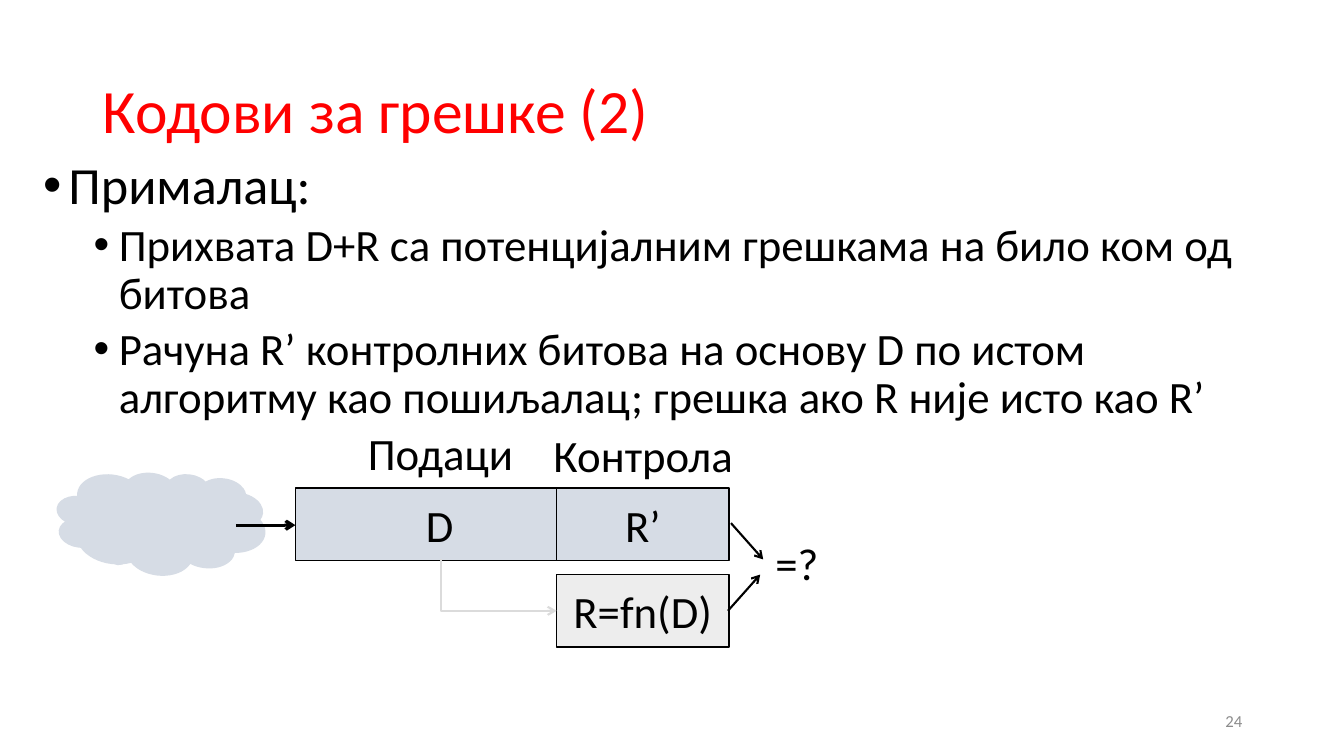
from dataclasses import dataclass
from typing import Optional

from lxml import etree
from pptx import Presentation
from pptx.dml.color import RGBColor
from pptx.enum.shapes import MSO_CONNECTOR, MSO_SHAPE
from pptx.enum.text import MSO_ANCHOR, PP_ALIGN
from pptx.oxml.ns import qn
from pptx.util import Pt

PX = 9144  # 100 px to the inch
FONT = "Calibri"
BLACK = RGBColor(0x00, 0x00, 0x00)
WHITE = RGBColor(0xFF, 0xFF, 0xFF)
RED = RGBColor(0xFF, 0x00, 0x00)
GREY = RGBColor(0x8C, 0x8C, 0x8C)
BLUE = RGBColor(0xD6, 0xDC, 0xE5)
PALE = RGBColor(0xED, 0xED, 0xED)
SILVER = RGBColor(0xDB, 0xDB, 0xDB)
LEFT, CENTER, RIGHT = PP_ALIGN.LEFT, PP_ALIGN.CENTER, PP_ALIGN.RIGHT
TOP, MIDDLE = MSO_ANCHOR.TOP, MSO_ANCHOR.MIDDLE
RECT, CLOUD = MSO_SHAPE.RECTANGLE, MSO_SHAPE.CLOUD_CALLOUT
LINE, ELBOW = MSO_CONNECTOR.STRAIGHT, MSO_CONNECTOR.ELBOW


@dataclass
class Label:
    text: str
    box: tuple[int, int, int, int]
    size: float = 32
    color: RGBColor = BLACK
    align: PP_ALIGN = CENTER
    anchor: MSO_ANCHOR = TOP
    space: float = 1.0
    wrap: bool = True


@dataclass
class Block:
    text: str
    box: tuple[int, int, int, int]
    fill: RGBColor
    line: Optional[RGBColor] = BLACK


@dataclass
class Arrow:
    start: tuple[int, int]
    end: tuple[int, int]
    width: float = 1.5
    color: RGBColor = BLACK


@dataclass
class Bullet:
    text: str
    level: int
    size: float
    left: int
    before: int


LABELS = [
    Label("24", (942, 695, 300, 40), 12, GREY, RIGHT, MIDDLE),
    Label("Кодови за грешке (2)", (92, 40, 1150, 145), 44, RED, LEFT, MIDDLE, 0.9),
    Label("Подаци", (354, 428, 166, 53), space=0.8, wrap=False),
    Label("Контрола", (538, 430, 200, 53), space=0.8, wrap=False),
]
BULLETS = [
    Bullet("Прималац:", 0, 37.3, 25, 10),
    Bullet("Прихвата D+R са потенцијалним грешкама на било ком од битова",
           1, 32, 75, 5),
    Bullet("Рачуна R’ контролних битова на основу D по истом алгоритму "
           "као пошиљалац; грешка ако R није исто као R’", 1, 32, 75, 5),
]
BLOCKS = [
    Block("D", (293, 484, 286, 72), BLUE),
    Block("R’", (552, 484, 171, 72), BLUE),
    Block("R=fn(D)", (552, 570, 171, 72), PALE),
]
RESULT = Block("=?", (769, 531, 53, 54), WHITE, None)
ARROWS = [
    Arrow((234, 521), (293, 521), 2.25),
    Arrow((722, 606), (754, 570)),
    Arrow((725, 519), (757, 555)),
]
# Corner arrow, given before its quarter turn
BEND = Arrow((520, 523), (469, 638), 1.5, SILVER)


def scale(lengths: tuple[int, ...]) -> list[int]:
    return [n * PX for n in lengths]


def style(para, size: float, color: RGBColor) -> None:
    para.font.name = FONT
    para.font.size = Pt(size)
    para.font.color.rgb = color


def add_label(slide, item: Label) -> None:
    frame = slide.shapes.add_textbox(*scale(item.box)).text_frame
    frame.word_wrap = item.wrap
    frame.vertical_anchor = item.anchor
    para = frame.paragraphs[0]
    para.text = item.text
    para.alignment = item.align
    para.line_spacing = item.space
    style(para, item.size, item.color)


def add_list(slide, items: list[Bullet]) -> None:
    frame = slide.shapes.add_textbox(*scale((33, 153, 1208, 522))).text_frame
    frame.word_wrap = True
    for i, item in enumerate(items):
        para = frame.add_paragraph() if i else frame.paragraphs[0]
        para.text = item.text
        para.level = item.level
        para.line_spacing = 0.9
        para.space_before = Pt(item.before)
        style(para, item.size, BLACK)
        props = para._p.get_or_add_pPr()
        props.set("marL", str(item.left * PX))
        props.set("indent", str(-25 * PX))
        font = etree.Element(qn("a:buFont"), typeface="Arial")
        mark = etree.Element(qn("a:buChar"), char="•")
        rest = props.find(qn("a:defRPr"))
        rest.addprevious(font)
        rest.addprevious(mark)


def add_block(slide, item: Block, kind: MSO_SHAPE = RECT):
    shape = slide.shapes.add_shape(kind, *scale(item.box))
    shape.shadow.inherit = False
    shape.fill.solid()
    shape.fill.fore_color.rgb = item.fill
    if item.line is None:
        shape.line.fill.background()
    else:
        shape.line.color.rgb = item.line
        shape.line.width = Pt(1)
    if item.text:
        frame = shape.text_frame
        frame.vertical_anchor = MIDDLE
        para = frame.paragraphs[0]
        para.text = item.text
        para.alignment = CENTER
        style(para, 32, BLACK)
    return shape


def add_arrow(slide, item: Arrow, kind: MSO_CONNECTOR = LINE):
    arrow = slide.shapes.add_connector(kind, *scale(item.start + item.end))
    arrow.line.color.rgb = item.color
    arrow.line.width = Pt(item.width)
    etree.SubElement(arrow.line._get_or_add_ln(), qn("a:tailEnd"), type="arrow")
    etree.SubElement(arrow._element.spPr, qn("a:effectLst"))
    return arrow


def main() -> None:
    deck = Presentation()
    deck.slide_width, deck.slide_height = scale((1333, 750))
    slide = deck.slides.add_slide(deck.slide_layouts[6])

    # Title, page number, captions and bullets
    for label in LABELS:
        add_label(slide, label)
    add_list(slide, BULLETS)

    # Network cloud
    cloud = add_block(slide, Block("", (56, 468, 207, 102), BLUE, BLUE), CLOUD)
    cloud.adjustments[0], cloud.adjustments[1] = -0.08, 0.16
    cloud.rotation = 6.6

    # Data and check fields
    for block in BLOCKS:
        add_block(slide, block)

    # Comparison sign
    frame = add_block(slide, RESULT).text_frame
    frame.margin_left = frame.margin_right = 0
    frame.margin_top = frame.margin_bottom = 0
    frame.word_wrap = True
    frame.paragraphs[0].alignment = LEFT

    # Arrows
    for arrow in ARROWS:
        add_arrow(slide, arrow)
    props = add_arrow(slide, BEND, ELBOW)._element.spPr
    props.find(qn("a:prstGeom")).set("prst", "bentConnector2")
    props.find(qn("a:xfrm")).set("rot", str(270 * 60000))

    deck.save("out.pptx")


if __name__ == "__main__":
    main()
